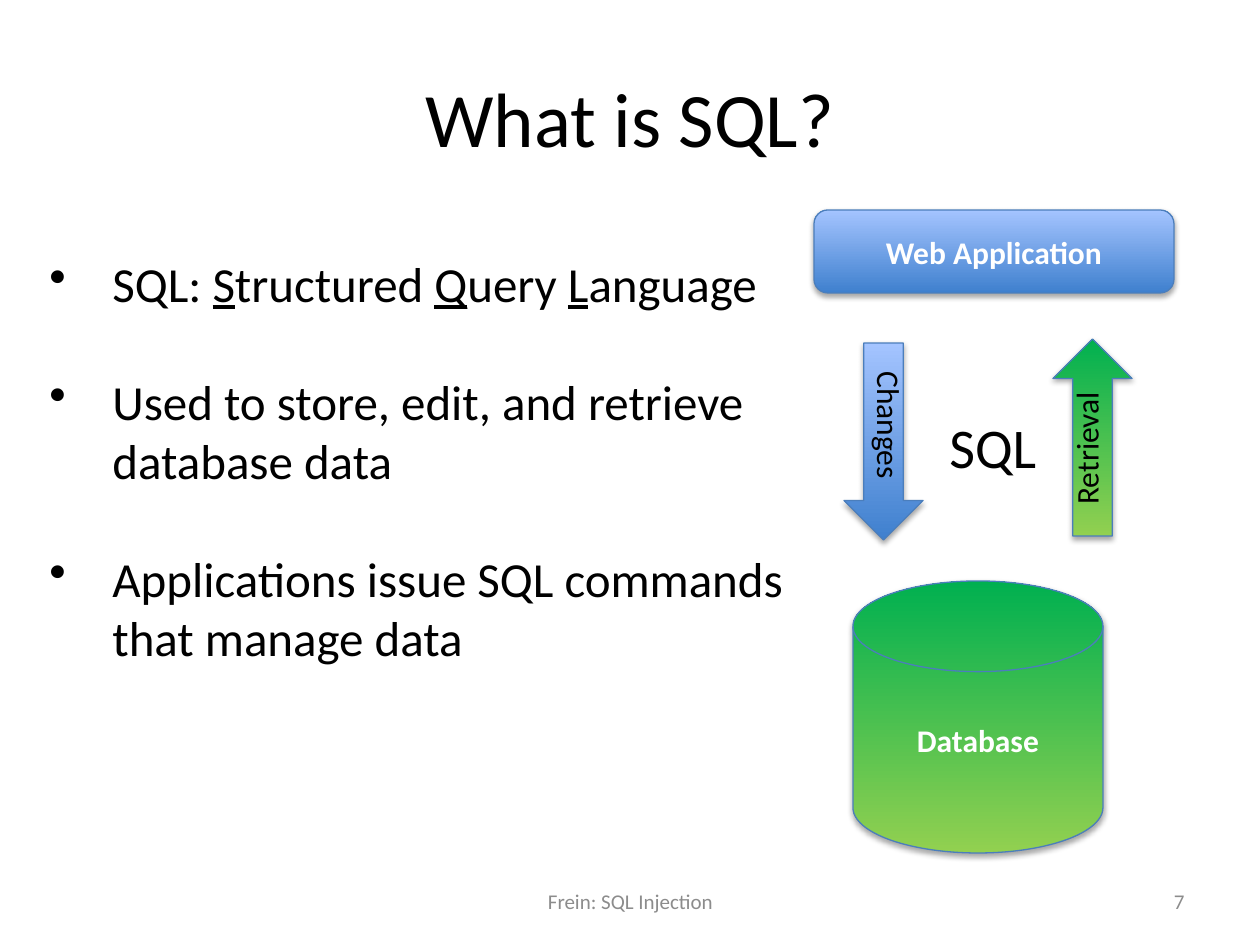
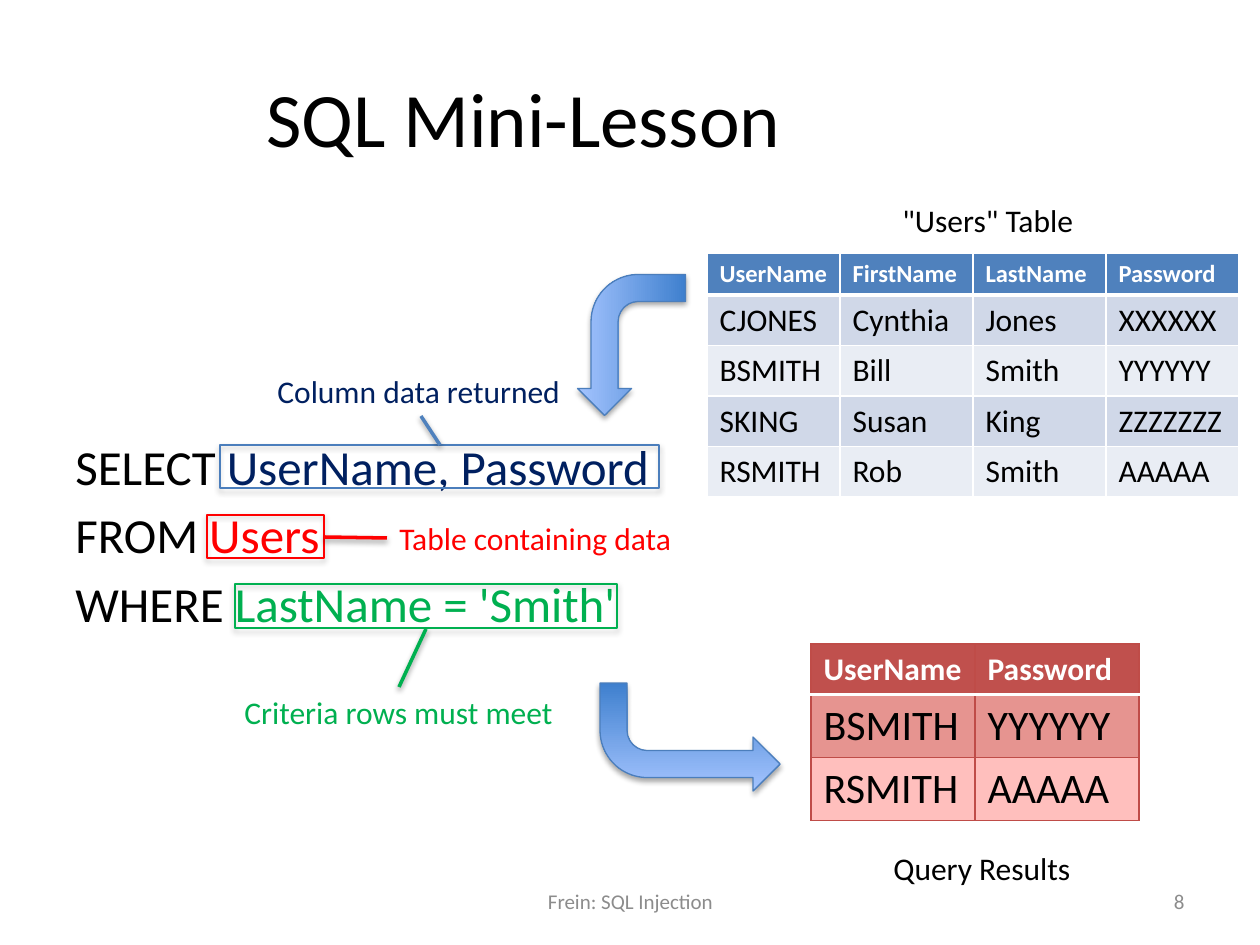
from lxml.etree import SubElement
from pptx import Presentation
from pptx.dml.color import RGBColor
from pptx.enum.shapes import MSO_CONNECTOR, MSO_SHAPE
from pptx.enum.text import MSO_ANCHOR, MSO_AUTO_SIZE, PP_ALIGN
from pptx.oxml import parse_xml
from pptx.oxml.ns import nsdecls, qn
from pptx.util import Emu, Pt

PX = 914400 / 126
FONT = "Calibri"

BLACK = RGBColor(0x00, 0x00, 0x00)
WHITE = RGBColor(0xFF, 0xFF, 0xFF)
GRAY = RGBColor(0x8C, 0x8C, 0x8C)
NAVY = RGBColor(0x00, 0x20, 0x60)
RED = RGBColor(0xFF, 0x00, 0x00)
GREEN = RGBColor(0x00, 0xB0, 0x50)
LIME = RGBColor(0x92, 0xD0, 0x50)
BLUE = RGBColor(0x4F, 0x81, 0xBD)
EDGE = RGBColor(0x4B, 0x7E, 0xBC)
DEEP = RGBColor(0x3F, 0x80, 0xCE)
SKY = RGBColor(0xA4, 0xC4, 0xFF)
BAND = RGBColor(0xD0, 0xD8, 0xE8)
PALE = RGBColor(0xE9, 0xED, 0xF4)
BRICK = RGBColor(0xC0, 0x50, 0x4D)
RUST = RGBColor(0xBF, 0x4C, 0x48)
ROSE = RGBColor(0xE6, 0x94, 0x90)
PINK = RGBColor(0xFF, 0xBF, 0xBD)

BLUES = (DEEP, SKY)
GREENS = (LIME, GREEN)


def px(*sizes):
    return [Emu(round(size * PX)) for size in sizes]


def style(item, size, color=BLACK, bold=False, align=PP_ALIGN.LEFT):
    item.alignment = align
    font = item.font
    font.name, font.size, font.bold = FONT, Pt(size), bold
    font.color.rgb = color


def add_text(slide, box, text, size, color=BLACK, align=PP_ALIGN.LEFT,
             anchor=MSO_ANCHOR.TOP):
    shape = slide.shapes.add_textbox(*px(*box))
    frame = shape.text_frame
    frame.word_wrap = True
    frame.vertical_anchor = anchor
    frame.text = text
    style(frame.paragraphs[0], size, color, align=align)
    return shape


def add_label(slide, box, text, color=BLACK, size=18, turn=None):
    """Add a one-line text that fits its box, turned on its side if asked."""
    shape = add_text(slide, box, text, size, color)
    shape.text_frame.word_wrap = False
    shape.text_frame.auto_size = MSO_AUTO_SIZE.SHAPE_TO_FIT_TEXT
    if turn:
        shape.element.txBody.bodyPr.set("vert", turn)


def add_lines(slide, box, lines, gap):
    """Add paragraphs made of (text, color, underline) runs."""
    frame = add_text(slide, box, "", 28).text_frame
    for i, line in enumerate(lines):
        item = frame.add_paragraph() if i else frame.paragraphs[0]
        style(item, 28)
        item.space_before = Pt(gap if i else 0)
        for text, color, under in line:
            run = item.add_run()
            run.text = text
            run.font.color.rgb = color
            run.font.underline = under
    return frame


def add_bullets(frame, indent):
    width = px(indent)[0]
    for item in frame.paragraphs:
        props = item._p.get_or_add_pPr()
        props.set("marL", str(width))
        props.set("indent", str(-width))
        mark = parse_xml(f'<a:buChar {nsdecls("a")} char="•"/>')
        font = props.find(qn("a:defRPr"))
        font.addprevious(mark)


def add_shadow(shape, alpha, dist):
    shape.element.spPr.append(parse_xml(
        f'<a:effectLst {nsdecls("a")}>'
        f'<a:outerShdw blurRad="40000" dist="{dist}" dir="5400000" '
        'rotWithShape="0"><a:srgbClr val="000000">'
        f'<a:alpha val="{alpha}000"/></a:srgbClr></a:outerShdw>'
        '</a:effectLst>'))


def add_block(slide, kind, box, shades=None, line=EDGE, text=""):
    """Add a shadowed shape; shades run from bottom to top."""
    shape = slide.shapes.add_shape(kind, *px(*box))
    shape.line.color.rgb = line
    shape.line.width = Pt(0.75)
    if shades:
        shape.fill.gradient()
        shape.fill.gradient_angle = 90
        for stop, shade in zip(shape.fill.gradient_stops, shades):
            stop.color.rgb = shade
    else:
        shape.fill.background()
    add_shadow(shape, 35, 23000)
    if text:
        frame = shape.text_frame
        frame.text = text
        frame.vertical_anchor = MSO_ANCHOR.MIDDLE
        style(frame.paragraphs[0], 18, WHITE, True, PP_ALIGN.CENTER)
    return shape


def add_bend(slide, box, turn):
    arrow = add_block(slide, MSO_SHAPE.BENT_ARROW, box, BLUES)
    arrow.rotation = turn
    arrow.element.spPr.xfrm.set("flipH", "1")


def add_line(slide, ends, color):
    line = slide.shapes.add_connector(MSO_CONNECTOR.STRAIGHT, *px(*ends))
    line.line.color.rgb = color
    line.line.width = Pt(2)
    add_shadow(line, 38, 20000)


def set_edges(cell, edges):
    """Draw (color, points) edges in the order left, right, top, bottom."""
    props = cell._tc.get_or_add_tcPr()
    for i, (side, (color, width)) in enumerate(zip("LRTB", edges)):
        edge = SubElement(props, qn(f"a:ln{side}"), w=str(Pt(width)))
        fill = SubElement(edge, qn("a:solidFill"))
        SubElement(fill, qn("a:srgbClr"), val=str(color))
        props.insert(i, edge)


def add_grid(slide, spot, rows, width, heights, sizes, fills, edge, rule):
    """Add a table; heights and sizes are for the head and the body."""
    count = len(rows[0])
    total = heights[0] + heights[1] * (len(rows) - 1)
    table = slide.shapes.add_table(
        len(rows), count, *px(*spot, width * count, total)).table
    for col in table.columns:
        col.width = px(width)[0]
    for r, row in enumerate(rows):
        body = min(r, 1)
        table.rows[r].height = px(heights[body])[0]
        fill = fills[2 - r % 2] if r else fills[0]
        for c, text in enumerate(row):
            cell = table.cell(r, c)
            cell.text = text
            style(cell.text_frame.paragraphs[0], sizes[body],
                  BLACK if r else WHITE, not r)
            cell.fill.solid()
            cell.fill.fore_color.rgb = fill
            set_edges(cell, (edge, edge, rule if r == 1 else edge,
                             edge if r else rule))


def add_page(deck, title, number, box, align):
    slide = deck.slides.add_slide(deck.slide_layouts[6])
    add_text(slide, box, title, 44, BLACK, align, MSO_ANCHOR.MIDDLE)
    add_text(slide, (431, 876, 399, 50), "Frein: SQL Injection", 12, GRAY,
             PP_ALIGN.CENTER, MSO_ANCHOR.MIDDLE)
    add_text(slide, (903, 876, 294, 50), str(number), 12, GRAY,
             PP_ALIGN.RIGHT, MSO_ANCHOR.MIDDLE)
    return slide


def add_intro(deck):
    slide = add_page(deck, "What is SQL?", 7, (63, 38, 1134, 157),
                     PP_ALIGN.CENTER)
    add_block(slide, MSO_SHAPE.ROUNDED_RECTANGLE, (814, 210, 360, 83),
              BLUES, text="Web Application")
    add_block(slide, MSO_SHAPE.FLOWCHART_MAGNETIC_DISK, (853, 581, 250, 272),
              GREENS, text="Database")
    name = [("SQL: ", BLACK, False)]
    for first, rest in (("S", "tructured "), ("Q", "uery "), ("L", "anguage")):
        name += [(first, BLACK, True), (rest, BLACK, False)]
    facts = [name] + [[(text, BLACK, False)] for text in (
        "Used to store, edit, and retrieve database data",
        "Applications issue SQL commands that manage data")]
    add_bullets(add_lines(slide, (37, 247, 777, 428), facts, 34), 63)
    add_block(slide, MSO_SHAPE.DOWN_ARROW, (844, 343, 79, 197), BLUES)
    add_block(slide, MSO_SHAPE.UP_ARROW, (1053, 339, 79, 197), GREENS)
    add_label(slide, (852, 359, 63, 121), "Changes", turn="vert")
    add_label(slide, (1061, 391, 63, 126), "Retrieval", turn="vert270")
    add_label(slide, (937, 406, 113, 81), "SQL", size=32)


def add_lesson(deck):
    slide = add_page(deck, "SQL Mini-Lesson", 8, (254, 38, 943, 157),
                     PP_ALIGN.LEFT)
    query = (("SELECT ", "UserName, Password", NAVY),
             ("FROM ", "Users", RED),
             ("WHERE ", "LastName = 'Smith'", GREEN))
    add_lines(slide, (63, 430, 1134, 220),
              [[(word, BLACK, False), (part, color, False)]
               for word, part, color in query], 5.6)
    for box, line in (((220, 445, 439, 43), EDGE), ((207, 515, 117, 43), RED),
                      ((235, 584, 382, 44), GREEN)):
        add_block(slide, MSO_SHAPE.RECTANGLE, box, line=line)
    for box, text, color in (
            ((265, 366, 311, 50), "Column data returned", NAVY),
            ((387, 513, 301, 50), "Table containing data", RED),
            ((232, 687, 336, 50), "Criteria rows must meet", GREEN),
            ((890, 195, 198, 50), '"Users" Table', BLACK),
            ((881, 843, 204, 50), "Query Results", BLACK)):
        add_label(slide, box, text, color)
    for ends, color in (((421, 416, 440, 445), BLUE),
                        ((387, 538, 324, 537), RED),
                        ((399, 687, 426, 629), GREEN)):
        add_line(slide, ends, color)
    users = (("UserName", "FirstName", "LastName", "Password"),
             ("CJONES", "Cynthia", "Jones", "XXXXXX"),
             ("BSMITH", "Bill", "Smith", "YYYYYY"),
             ("SKING", "Susan", "King", "ZZZZZZZ"),
             ("RSMITH", "Rob", "Smith", "AAAAA"))
    add_grid(slide, (707, 253), users, 133, (42, 50), (14, 18),
             (BLUE, BAND, PALE), (WHITE, 1), (WHITE, 3))
    found = (("UserName", "Password"), ("BSMITH", "YYYYYY"),
             ("RSMITH", "AAAAA"))
    add_grid(slide, (811, 644), found, 164, (50, 63), (18, 24),
             (BRICK, ROSE, PINK), (RUST, 0.75), (WHITE, 2))
    add_bend(slide, (561, 291, 141, 108), 270)
    add_bend(slide, (600, 683, 180, 108), 180)


def main():
    deck = Presentation()
    deck.slide_width, deck.slide_height = px(1260, 945)
    add_intro(deck)
    add_lesson(deck)
    deck.save("out.pptx")


if __name__ == "__main__":
    main()
